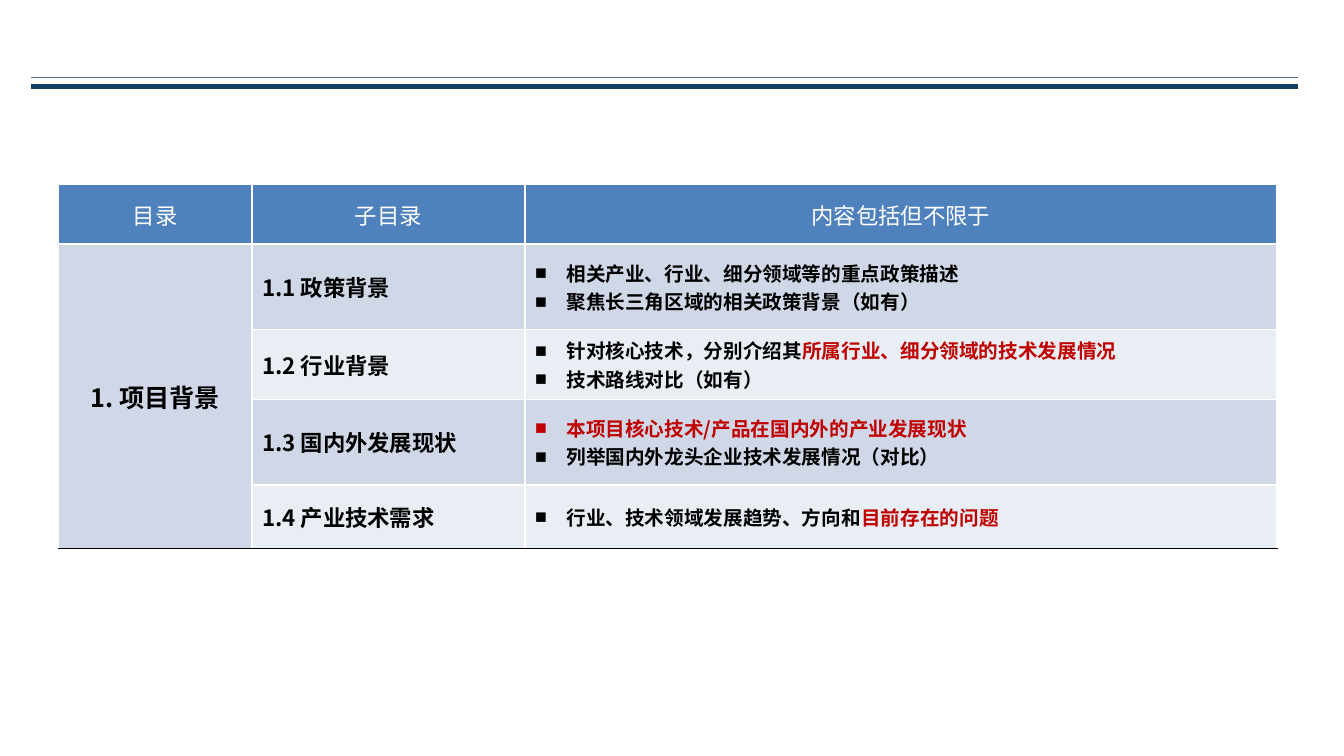
from dataclasses import dataclass

from lxml.etree import SubElement
from pptx import Presentation
from pptx.dml.color import RGBColor
from pptx.enum.shapes import MSO_CONNECTOR
from pptx.enum.text import MSO_ANCHOR, PP_ALIGN
from pptx.oxml import parse_xml
from pptx.oxml.ns import nsdecls, qn
from pptx.util import Cm, Pt


@dataclass(frozen=True)
class Theme:
    font: str = "Noto Sans CJK SC"
    bullet_font: str = "Arial"
    white: str = "FFFFFF"
    black: str = "000000"
    accent: str = "C00000"
    header: str = "4F81BD"
    bands: tuple = ("D0D8E8", "E9EDF4")
    thin_rule: str = "537285"
    thick_rule: str = "124062"
    chapter_size: int = 18
    heading_size: int = 16
    detail_size: int = 14


THEME = Theme()

HEADINGS = ("目录", "子目录", "内容包括但不限于")
CHAPTER = "1. 项目背景"
# Each section: title, then points made of (text, is highlighted) pieces
SECTIONS = (
    ("1.1 政策背景", (
        (("相关产业、行业、细分领域等的重点政策描述", False),),
        (("聚焦长三角区域的相关政策背景（如有）", False),),
    )),
    ("1.2 行业背景", (
        (("针对核心技术，分别介绍其", False), ("所属行业、细分领域的技术发展情况", True)),
        (("技术路线对比（如有）", False),),
    )),
    ("1.3 国内外发展现状", (
        (("本项目核心技术/产品在国内外的产业发展现状", True),),
        (("列举国内外龙头企业技术发展情况（对比）", False),),
    )),
    ("1.4 产业技术需求", (
        (("行业、技术领域发展趋势、方向和", False), ("目前存在的问题", True)),
    )),
)
COLUMN_WIDTHS = (4.88, 6.88, 18.95)
ROW_HEIGHTS = (1.5, 2.16, 1.75, 2.16, 1.6)


def add_rule(slide, y, color, width):
    rule = slide.shapes.add_connector(
        MSO_CONNECTOR.STRAIGHT, Cm(32.72), Cm(y), Cm(0.79), Cm(y))
    rule.line.color.rgb = RGBColor.from_string(color)
    rule.line.width = Pt(width)
    SubElement(rule._element.spPr, qn("a:effectLst"))


def style_cell(cell, fill, top=1, bottom=1, bottom_color=THEME.white):
    cell.vertical_anchor = MSO_ANCHOR.MIDDLE
    cell.fill.solid()
    cell.fill.fore_color.rgb = RGBColor.from_string(fill)
    edges = (("L", 1, THEME.white), ("R", 1, THEME.white),
             ("T", top, THEME.white), ("B", bottom, bottom_color))
    properties = cell._tc.get_or_add_tcPr()
    for position, (side, width, color) in enumerate(edges):
        properties.insert(position, parse_xml(
            f'<a:ln{side} {nsdecls("a")} w="{Pt(width)}"><a:solidFill>'
            f'<a:srgbClr val="{color}"/></a:solidFill></a:ln{side}>'))


def set_font(paragraph, size, bold):
    paragraph.font.size = Pt(size)
    paragraph.font.bold = bold
    paragraph.font.name = THEME.font
    for run in paragraph.runs:
        SubElement(run._r.get_or_add_rPr(), qn("a:ea"), typeface=THEME.font)


def write_label(cell, text, size, color, bold=True, align=PP_ALIGN.LEFT):
    label = cell.text_frame.paragraphs[0]
    label.add_run().text = text
    label.alignment = align
    label.font.color.rgb = RGBColor.from_string(color)
    set_font(label, size, bold)


def write_points(cell, points):
    frame = cell.text_frame
    for number, pieces in enumerate(points):
        point = frame.add_paragraph() if number else frame.paragraphs[0]
        properties = point._p.get_or_add_pPr()
        properties.set("marL", str(Cm(0.79)))
        properties.set("indent", str(-Cm(0.79)))
        SubElement(properties, qn("a:buFont"), typeface=THEME.bullet_font)
        SubElement(properties, qn("a:buChar"), char="■")
        for text, highlighted in pieces:
            run = point.add_run()
            run.text = text
            color = THEME.accent if highlighted else THEME.black
            run.font.color.rgb = RGBColor.from_string(color)
        set_font(point, THEME.detail_size, True)


def add_outline_table(slide):
    table = slide.shapes.add_table(
        len(ROW_HEIGHTS), len(COLUMN_WIDTHS), Cm(1.47), Cm(4.65),
        Cm(sum(COLUMN_WIDTHS)), Cm(sum(ROW_HEIGHTS))).table
    for column, width in zip(table.columns, COLUMN_WIDTHS):
        column.width = Cm(width)
    for row, height in zip(table.rows, ROW_HEIGHTS):
        row.height = Cm(height)

    # Header row
    for column, heading in enumerate(HEADINGS):
        cell = table.cell(0, column)
        style_cell(cell, THEME.header)
        write_label(cell, heading, THEME.heading_size, THEME.white,
                    bold=False, align=PP_ALIGN.CENTER)

    # Section rows with alternating bands
    last = len(SECTIONS)
    for row, (title, points) in enumerate(SECTIONS, start=1):
        band = THEME.bands[(row - 1) % 2]
        edge = THEME.black if row == last else THEME.white
        for column, fill in enumerate((THEME.bands[0], band, band)):
            style_cell(table.cell(row, column), fill, bottom_color=edge)
        write_label(table.cell(row, 1), title, THEME.heading_size, THEME.black)
        write_points(table.cell(row, 2), points)

    # Chapter cell spanning every section
    chapter = table.cell(1, 0)
    chapter.merge(table.cell(last, 0))
    chapter._tc.tcPr.find(qn("a:lnB")).find(".//" + qn("a:srgbClr")).set(
        "val", THEME.black)
    write_label(chapter, CHAPTER, THEME.chapter_size, THEME.black,
                align=PP_ALIGN.CENTER)


def main():
    presentation = Presentation()
    presentation.slide_width = Cm(33.87)
    presentation.slide_height = Cm(19.05)
    slide = presentation.slides.add_slide(presentation.slide_layouts[6])

    # Double rule under the title area
    add_rule(slide, 1.96, THEME.thin_rule, 1)
    add_rule(slide, 2.18, THEME.thick_rule, 3)

    add_outline_table(slide)
    presentation.save("out.pptx")


if __name__ == "__main__":
    main()
